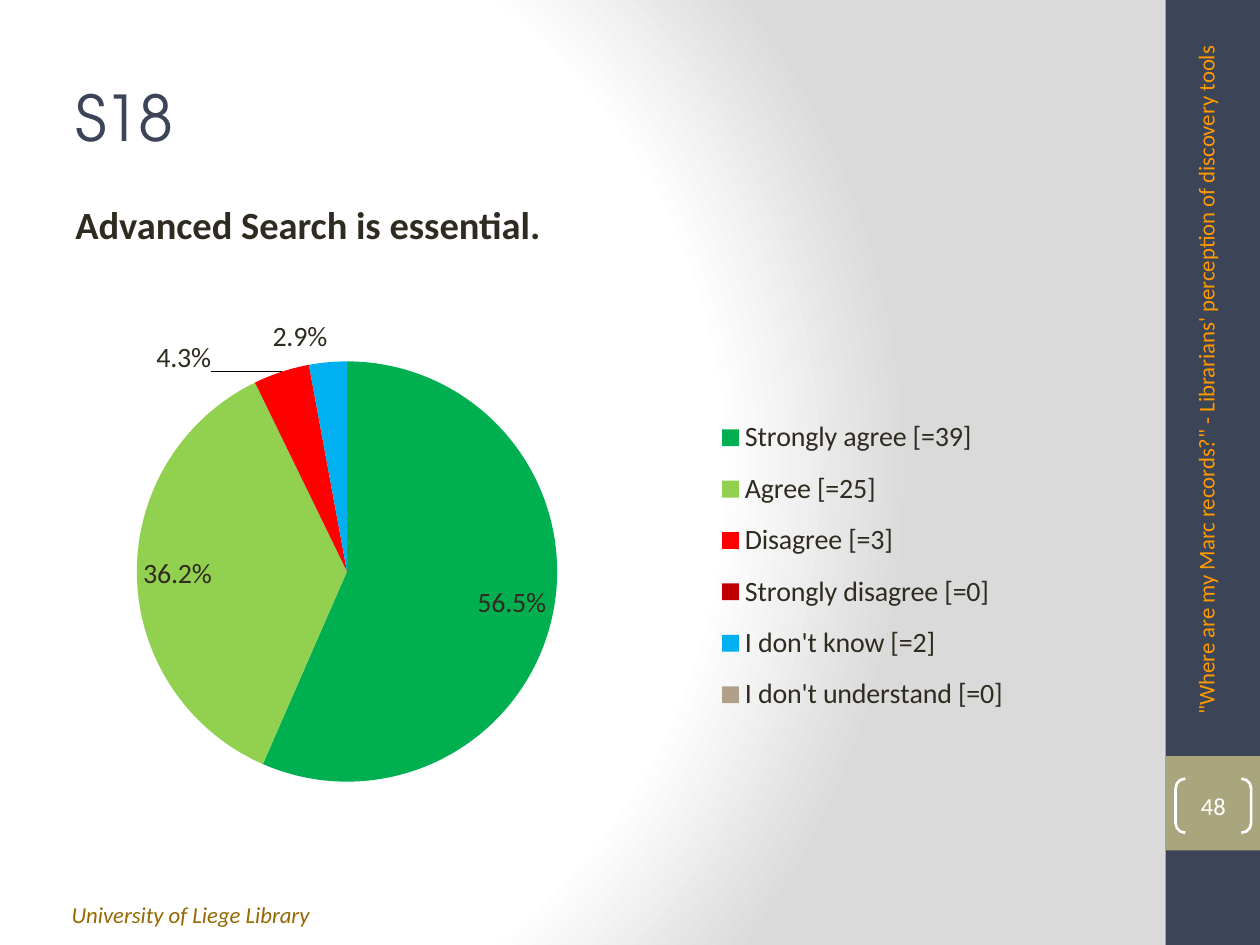
from lxml.etree import SubElement
from pptx import Presentation
from pptx.chart.data import CategoryChartData
from pptx.dml.color import RGBColor
from pptx.enum.chart import XL_CHART_TYPE, XL_LABEL_POSITION, XL_LEGEND_POSITION
from pptx.enum.shapes import MSO_SHAPE
from pptx.enum.text import MSO_ANCHOR, PP_ALIGN
from pptx.oxml import parse_xml
from pptx.oxml.ns import nsdecls, qn
from pptx.util import Inches, Pt

# Colours and fonts
NAVY = RGBColor(0x3C, 0x44, 0x57)
KHAKI = RGBColor(0xA9, 0xA5, 0x7C)
BROWN = RGBColor(0x95, 0x68, 0x03)
INK = RGBColor(0x2F, 0x2B, 0x20)
ORANGE = RGBColor(0xFF, 0x99, 0x00)
WHITE = RGBColor(0xFF, 0xFF, 0xFF)
GREY = RGBColor(0xDA, 0xDA, 0xDA)
BODY_FONT = "Calibri"
TITLE_FONT = "TeX Gyre Adventor"

# Content
TITLE = "S18"
STATEMENT = "Advanced Search is essential."
FOOTER = "University of Liege Library"
TALK = "\"Where are my Marc records?\" - Librarians' perception of discovery tools"
PAGE = "48"
ANSWERS = [
    ("Strongly agree [=39]", 0.565, RGBColor(0x00, 0xB0, 0x50)),
    ("Agree [=25]", 0.362, RGBColor(0x92, 0xD0, 0x50)),
    ("Disagree [=3]", 0.043, RGBColor(0xFF, 0x00, 0x00)),
    ("Strongly disagree [=0]", 0, RGBColor(0xC0, 0x00, 0x00)),
    ("I don't know [=2]", 0.029, RGBColor(0x00, 0xB0, 0xF0)),
    ("I don't understand [=0]", 0, RGBColor(0xB1, 0xA0, 0x89)),
]
DISAGREE = 2
PERCENT = "0.0%;;"  # zero shares get no label

# Layout in inches
WIDTH, HEIGHT = 10, 7.5
BAND = 0.75
BAND_LEFT = WIDTH - BAND
MARGIN = 0.5
TEXT_WIDTH = 8.33
STOPS = [(0, WHITE), (75, WHITE), (100, GREY)]

prs = Presentation()
prs.slide_width, prs.slide_height = Inches(WIDTH), Inches(HEIGHT)
slide = prs.slides.add_slide(prs.slide_layouts[6])


def add_shape(kind, *box, fill=None):
    shape = slide.shapes.add_shape(kind, *map(Inches, box))
    shape.shadow.inherit = False
    shape.line.fill.background()
    if fill is None:
        shape.fill.background()
    else:
        shape.fill.solid()
        shape.fill.fore_color.rgb = fill
    return shape


def write(shape, text, size, color, font=BODY_FONT, bold=False, italic=False):
    shape.text_frame.word_wrap = True
    paragraph = shape.text_frame.paragraphs[0]
    paragraph.text = text
    style = paragraph.font
    style.name, style.size, style.bold, style.italic = font, Pt(size), bold, italic
    style.color.rgb = color
    return paragraph


def add_text(box, *args, **kwargs):
    textbox = slide.shapes.add_textbox(*map(Inches, box))
    return textbox, write(textbox, *args, **kwargs)


def manual_layout(**settings):
    layout = parse_xml(f'<c:layout {nsdecls("c")}><c:manualLayout/></c:layout>')
    for name, value in settings.items():
        SubElement(layout[0], qn(f"c:{name}")).set("val", str(value))
    return layout


# Background: white glow fading to grey
slide.background.fill.solid()
solid = next(slide.element.iter(qn("a:solidFill")))
stops = "".join(f'<a:gs pos="{share * 1000}"><a:srgbClr val="{color}"/></a:gs>'
                for share, color in STOPS)
solid.getparent().replace(solid, parse_xml(
    f'<a:gradFill {nsdecls("a")} rotWithShape="1"><a:gsLst>{stops}</a:gsLst>'
    '<a:path path="circle"><a:fillToRect l="20000" t="50000" r="100000" b="50000"/>'
    '</a:path></a:gradFill>'))

# Side band
add_shape(MSO_SHAPE.RECTANGLE, BAND_LEFT, 0, BAND, HEIGHT, fill=NAVY)
add_shape(MSO_SHAPE.RECTANGLE, BAND_LEFT, 6, BAND, BAND, fill=KHAKI)

# Footer, title and statement
add_text((0.47, 7.1, 5.32, 0.32), FOOTER, 13, BROWN, italic=True)
title, title_line = add_text((MARGIN, 0.3, TEXT_WIDTH, 1.25), TITLE, 36, NAVY, TITLE_FONT)
title.text_frame.vertical_anchor = MSO_ANCHOR.MIDDLE
title_line.runs[0].font._element.set("spc", "-100")
add_text((MARGIN, 1.55, TEXT_WIDTH, 5.45), STATEMENT, 22, INK, bold=True)

# Page number in brackets
brackets = add_shape(MSO_SHAPE.DOUBLE_BRACKET, 9.33, 6.18, 0.6, 0.43)
brackets.adjustments[0] = 0.18
brackets.line.color.rgb = WHITE
brackets.line.width = Pt(1.5)
write(brackets, PAGE, 14, WHITE).alignment = PP_ALIGN.CENTER
page_frame = brackets.text_frame
page_frame.vertical_anchor = MSO_ANCHOR.MIDDLE
page_frame.margin_left = page_frame.margin_right = 0
page_frame.margin_top = page_frame.margin_bottom = 0

# Talk title running up the band
talk, _ = add_text((6.83, 2.79, 5.56, 0.4), TALK, 13, ORANGE)
talk.rotation = 270

# Pie of answers
data = CategoryChartData(number_format="0.0%")
data.categories = [answer for answer, _, _ in ANSWERS]
data.add_series("Series 1", [share for _, share, _ in ANSWERS])
chart = slide.shapes.add_chart(
    XL_CHART_TYPE.PIE, *map(Inches, (0.67, 2.41, 7.72, 4.17)), data).chart
chart.has_title = False
chart.font.name, chart.font.size = BODY_FONT, Pt(16)
chart.font.color.rgb = INK

plot_area = chart.element.chart.plotArea
for layout in plot_area.findall(qn("c:layout")):
    plot_area.remove(layout)
plot_area.insert(0, manual_layout(layoutTarget="inner", xMode="edge", yMode="edge",
                                  x=0.05, y=0.11, w=0.44, h=0.8))

# Legend with widely spaced rows
chart.has_legend = True
legend = chart.legend
legend.position = XL_LEGEND_POSITION.RIGHT
legend.include_in_layout = False
for layout in legend._element.findall(qn("c:layout")):
    legend._element.remove(layout)
legend._element.find(qn("c:legendPos")).addnext(
    manual_layout(xMode="edge", yMode="edge", x=0.63, y=0.19, w=0.34, h=0.62))

# Slices and their labels
pie = chart.plots[0]
pie.vary_by_categories = True
shares = pie.series[0]
for index, (_, _, color) in enumerate(ANSWERS):
    slice_fill = shares.points[index].format.fill
    slice_fill.solid()
    slice_fill.fore_color.rgb = color

labels = shares.data_labels
labels.show_value = True
labels.show_percentage = False
labels.number_format, labels.number_format_is_linked = PERCENT, False
labels.position = XL_LABEL_POSITION.BEST_FIT
labels.font.name, labels.font.size = BODY_FONT, Pt(16)
labels.font.color.rgb = INK

# The small "Disagree" label is pulled left of its slice
shares.points[DISAGREE].data_label.position = XL_LABEL_POSITION.BEST_FIT
disagree_label = next(labels._element.iter(qn("c:dLbl")))
disagree_label.insert(1, manual_layout(x=-0.07, y=0.02))

prs.save("out.pptx")
